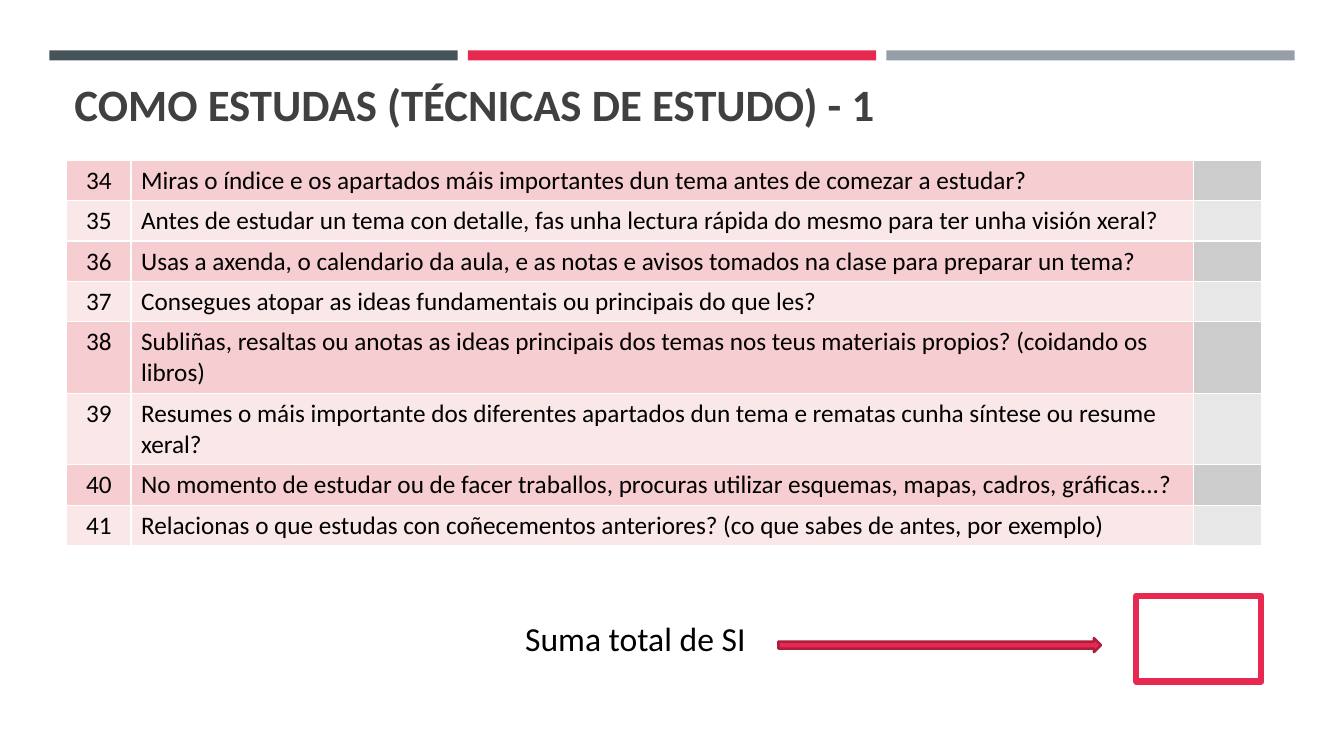
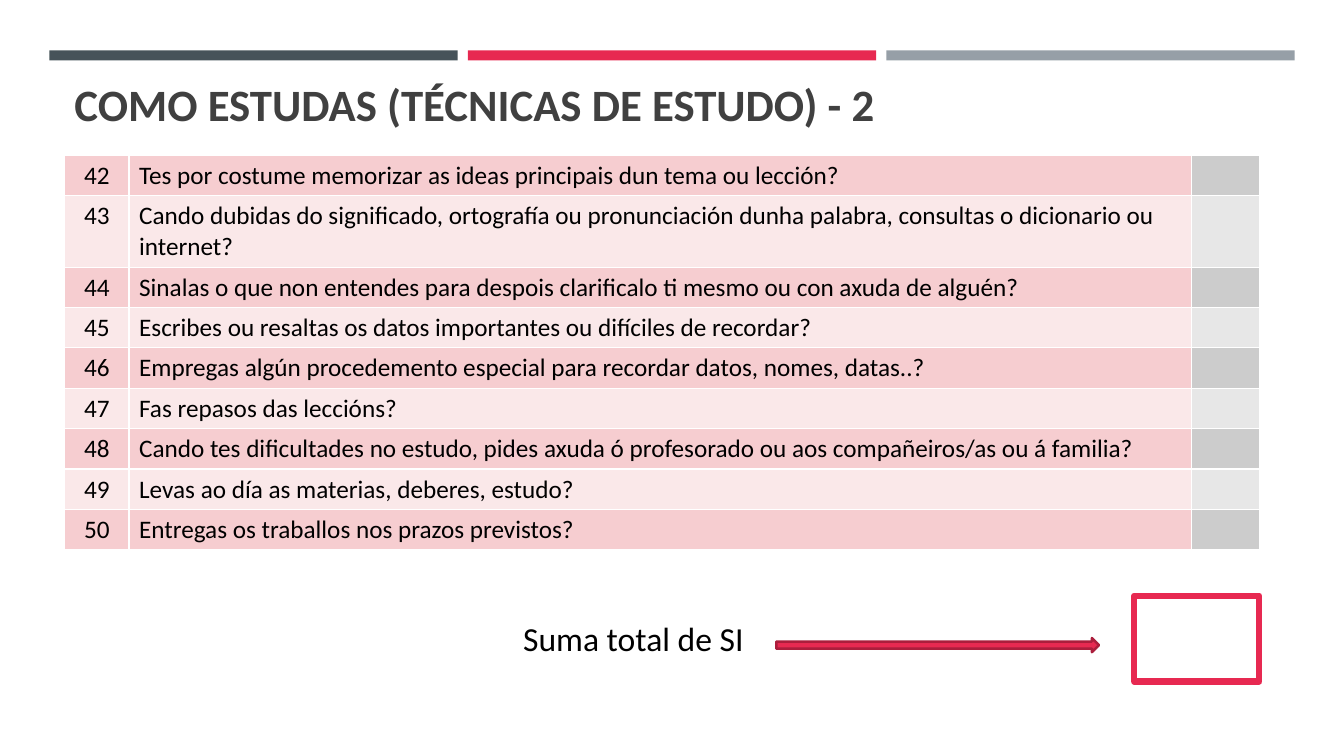
from pptx import Presentation
from pptx.dml.color import RGBColor
from pptx.enum.shapes import MSO_SHAPE
from pptx.enum.text import MSO_ANCHOR, PP_ALIGN
from pptx.oxml import parse_xml
from pptx.oxml.ns import nsdecls
from pptx.util import Emu, Pt

PX = 9144  # EMU per px, 100 px to the inch
FONT = "Calibri"
WHITE = RGBColor(0xFF, 0xFF, 0xFF)
BLACK = RGBColor(0x00, 0x00, 0x00)
TITLE_GREY = RGBColor(0x40, 0x40, 0x40)
SLATE = RGBColor(0x46, 0x53, 0x59)
RED = RGBColor(0xE7, 0x29, 0x51)
DARK_RED = RGBColor(0xAB, 0x1E, 0x3C)
STEEL = RGBColor(0x96, 0x9F, 0xA7)
QUESTION_FILLS = (RGBColor(0xF6, 0xCD, 0xD0), RGBColor(0xFA, 0xE8, 0xE9))
ANSWER_FILLS = (RGBColor(0xCC, 0xCC, 0xCC), RGBColor(0xE7, 0xE7, 0xE7))

BAND_LEFT, BAND_TOP, BAND_WIDTH, BAND_HEIGHT, BAND_STEP = 49, 50, 405, 10, 415
NUMBER_WIDTH, QUESTION_WIDTH, ANSWER_WIDTH = 64, 1054, 67
ROW_HEIGHT, TALL_ROW_HEIGHT = 40, 71

# Each page: first question number, table left, table top, two-line questions, questions
PAGES = [
    (34, 66, 159, {38, 39}, [
        "Miras o índice e os apartados máis importantes dun tema antes de comezar a estudar?",
        "Antes de estudar un tema con detalle, fas unha lectura rápida do mesmo para ter unha visión xeral?",
        "Usas a axenda, o calendario da aula, e as notas e avisos tomados na clase para preparar un tema?",
        "Consegues atopar as ideas fundamentais ou principais do que les?",
        "Subliñas, resaltas ou anotas as ideas principais dos temas nos teus materiais propios? (coidando os libros)",
        "Resumes o máis importante dos diferentes apartados dun tema e rematas cunha síntese ou resume xeral?",
        "No momento de estudar ou de facer traballos, procuras utilizar esquemas, mapas, cadros, gráficas...?",
        "Relacionas o que estudas con coñecementos anteriores? (co que sabes de antes, por exemplo)",
    ]),
    (42, 64, 154, {43}, [
        "Tes por costume memorizar as ideas principais dun tema ou lección?",
        "Cando dubidas do significado, ortografía ou pronunciación dunha palabra, consultas o dicionario ou internet?",
        "Sinalas o que non entendes para despois clarificalo ti mesmo ou con axuda de alguén?",
        "Escribes ou resaltas os datos importantes ou difíciles de recordar?",
        "Empregas algún procedemento especial para recordar datos, nomes, datas..?",
        "Fas repasos das leccións?",
        "Cando tes dificultades no estudo, pides axuda ó profesorado ou aos compañeiros/as ou á familia?",
        "Levas ao día as materias, deberes, estudo?",
        "Entregas os traballos nos prazos previstos?",
    ]),
]


def px(*lengths):
    return [Emu(length * PX) for length in lengths]


def style(paragraph, size, color=BLACK, bold=False, align=PP_ALIGN.LEFT):
    paragraph.alignment = align
    font = paragraph.font
    font.name, font.size, font.bold = FONT, Pt(size), bold
    font.color.rgb = color


class Deck:
    """Holds the presentation, its shared style and the current slide."""

    def __init__(self):
        self.prs = Presentation()
        self.prs.slide_width, self.prs.slide_height = px(1333, 750)
        self.slide = None

    def new_slide(self, title):
        self.slide = self.prs.slides.add_slide(self.prs.slide_layouts[6])
        for i, color in enumerate((SLATE, RED, STEEL)):
            self.shape(BAND_LEFT + i * BAND_STEP, BAND_TOP, BAND_WIDTH, BAND_HEIGHT, color)
        self.text(title, 64, 77, 1206, 57, 32, TITLE_GREY, True, MSO_ANCHOR.BOTTOM)

    def shape(self, left, top, width, height, fill, line=None, weight=0, kind=MSO_SHAPE.RECTANGLE):
        shape = self.slide.shapes.add_shape(kind, *px(left, top, width, height))
        shape.shadow.inherit = False
        shape.fill.solid()
        shape.fill.fore_color.rgb = fill
        if line is None:
            shape.line.fill.background()
        else:
            shape.line.color.rgb = line
            shape.line.width = Pt(weight)

    def text(self, words, left, top, width, height, size, color=BLACK, bold=False,
             anchor=MSO_ANCHOR.TOP):
        frame = self.slide.shapes.add_textbox(*px(left, top, width, height)).text_frame
        frame.word_wrap = True
        frame.vertical_anchor = anchor
        frame.text = words
        style(frame.paragraphs[0], size, color, bold)

    def table(self, left, top, widths, heights, rows, fills):
        """Adds a table with white rules, striped by row; numbers are centred."""
        table = self.slide.shapes.add_table(
            len(rows), len(widths), *px(left, top, sum(widths), sum(heights))).table
        table.first_row = table.horz_banding = False
        for column, width in zip(table.columns, px(*widths)):
            column.width = width
        for r, (row, height) in enumerate(zip(rows, px(*heights))):
            table.rows[r].height = height
            for c, words in enumerate(row):
                cell = table.cell(r, c)
                cell.text = words
                align = PP_ALIGN.CENTER if words.isdigit() else PP_ALIGN.LEFT
                style(cell.text_frame.paragraphs[0], 18, align=align)
                self.cell_borders(cell)
                cell.fill.solid()
                cell.fill.fore_color.rgb = fills[r % 2]

    def cell_borders(self, cell):
        properties = cell._tc.get_or_add_tcPr()
        for side in "LRTB":
            properties.append(parse_xml(
                f'<a:ln{side} {nsdecls("a")} w="{Pt(1)}"><a:solidFill>'
                f'<a:srgbClr val="{WHITE}"/></a:solidFill></a:ln{side}>'))

    def questionnaire(self, first, left, top, tall, questions):
        numbers = range(first, first + len(questions))
        heights = [TALL_ROW_HEIGHT if n in tall else ROW_HEIGHT for n in numbers]
        rows = [(str(n), question) for n, question in zip(numbers, questions)]
        widths = (NUMBER_WIDTH, QUESTION_WIDTH)
        self.table(left, top, widths, heights, rows, QUESTION_FILLS)
        self.table(left + sum(widths), top, (ANSWER_WIDTH,), heights,
                   [("",)] * len(rows), ANSWER_FILLS)

    def total(self, left):
        """Adds the label, arrow and empty box for the number of SI answers."""
        self.text("Suma total de SI", left + 445, 608, 245, 50, 24)
        self.shape(left + 706, 633, 320, 14, RED, DARK_RED, 1.75, MSO_SHAPE.RIGHT_ARROW)
        self.shape(left + 1061, 591, 124, 85, WHITE, RED, 4.5)


def main():
    deck = Deck()
    for number, (first, left, top, tall, questions) in enumerate(PAGES, 1):
        deck.new_slide(f"COMO ESTUDAS (TÉCNICAS DE ESTUDO) - {number}")
        deck.questionnaire(first, left, top, tall, questions)
        deck.total(left)
    deck.prs.save("out.pptx")


if __name__ == "__main__":
    main()
